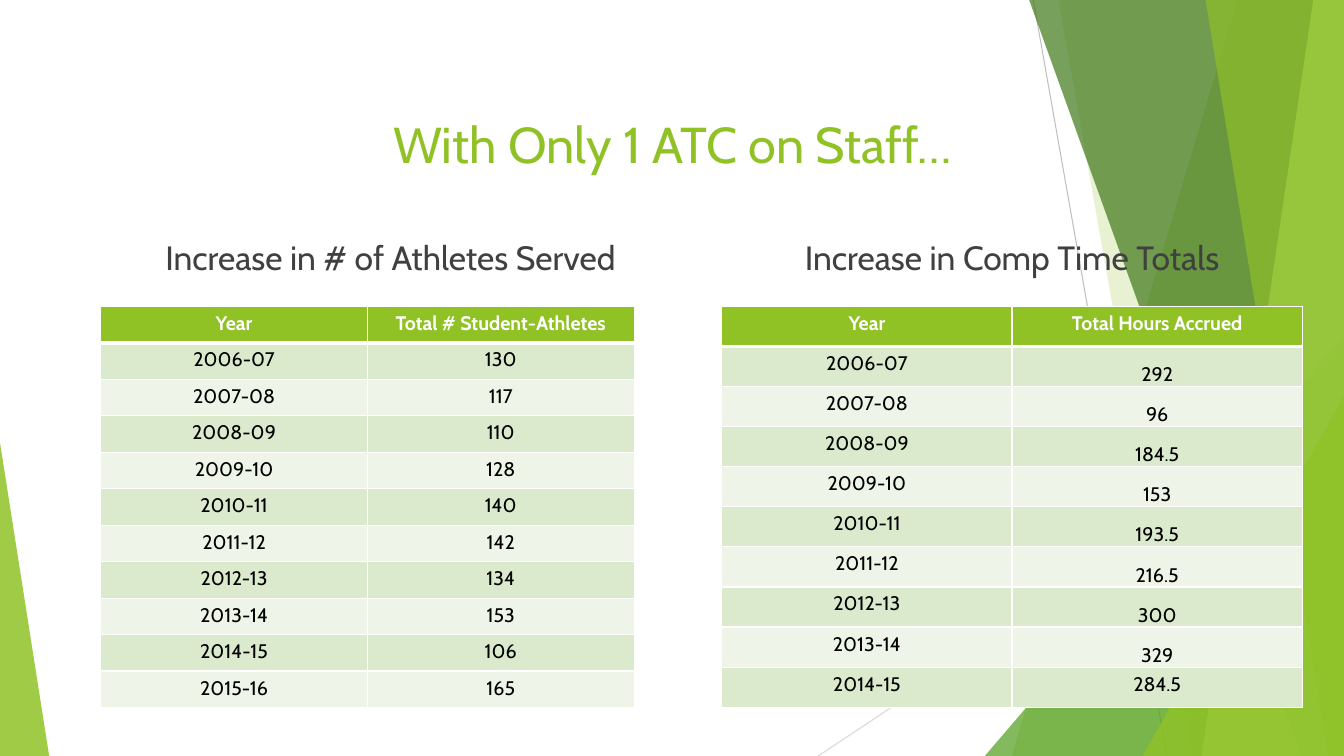
"""Build the slide on athletes served and comp time with one ATC on staff."""
from pptx import Presentation
from pptx.dml.color import RGBColor
from pptx.enum.shapes import MSO_CONNECTOR, MSO_SHAPE
from pptx.enum.text import MSO_ANCHOR, MSO_AUTO_SIZE, PP_ALIGN
from pptx.oxml.ns import qn
from pptx.util import Cm, Pt
from lxml.etree import SubElement

WIDE, HIGH = 33.87, 19.05
FONT = "Cabin"
HUES = {
    "lime": "90C226", "green": "54A021", "forest": "3F7819", "pale": "C0E474",
    "band": "DBE9CD", "light": "EEF4E8", "text": "404040", "black": "000000",
    "white": "FFFFFF", "grey": "BFBFBF", "silver": "D9D9D9",
}

TITLE = ("With Only 1 ATC on Staff…", (3.61, 2.72, 26.67, 3.02))
HEADS = {
    1: ("Increase in # of Athletes Served", (2.97, 5.89, 13.74, 1.22)),
    3: ("Increase in Comp Time Totals", (18.95, 5.89, 13.11, 1.22)),
}
ATHLETES = [
    ("Year", "Total # Student-Athletes"),
    ("2006-07", "130"), ("2007-08", "117"), ("2008-09", "110"),
    ("2009-10", "128"), ("2010-11", "140"), ("2011-12", "142"),
    ("2012-13", "134"), ("2013-14", "153"), ("2014-15", "106"),
    ("2015-16", "165"),
]
HOURS = [
    ("Year", "Total Hours Accrued"),
    ("2006-07", "292"), ("2007-08", "96"), ("2008-09", "184.5"),
    ("2009-10", "153"), ("2010-11", "193.5"), ("2011-12", "216.5"),
    ("2012-13", "300"), ("2013-14", "329"), ("2014-15", "284.5"),
]
TABLES = [(ATHLETES, (2.54, 7.72, 13.44, 10.11), False),
          (HOURS, (18.19, 7.72, 14.63, 10.11), True)]

LINES = [("grey", (26.04, 0, 29.41, HIGH)),
         ("silver", (WIDE, 10.24, 20.62, HIGH))]
DECOR = [
    ("blade", 31.19, 25.5, "lime", 30),
    ("blade", 26.67, 30.05, "lime", 20),
    ("wedge", (24.82, 8.46, 9.05), 1, "green", 72),
    ("blade", 25.93, 32.79, "forest", 70),
    ("blade", 33.1, 30.28, "pale", 70),
    ("blade", 30.38, 33.48, "lime", 65),
    ("wedge", (28.8, 9.98, 5.07), 1, "lime", 80),
    ("wedge", (0, 11.15, 1.24), 0, "lime", 85),
]
LOW = {"vertical_anchor": MSO_ANCHOR.BOTTOM, "margin_left": Cm(0.02),
       "margin_right": Cm(0.02), "margin_top": Cm(0.02), "margin_bottom": 0}


def apply(item, values):
    for name, value in values.items():
        setattr(item, name, value)


def hue(name):
    return RGBColor.from_string(HUES[name])


def write(frame, text, size, tint, bold=False, before=0):
    frame.text = text
    para = frame.paragraphs[0]
    apply(para, {"alignment": PP_ALIGN.CENTER, "space_before": Pt(before)})
    font = para.runs[0].font
    apply(font, {"name": FONT, "size": Pt(size), "bold": bold})
    font.color.rgb = hue(tint)


def place(holder, box):
    sides = ("left", "top", "width", "height")
    apply(holder, {side: Cm(n) for side, n in zip(sides, box)})


def add_line(shapes, tint, ends):
    line = shapes.add_connector(MSO_CONNECTOR.STRAIGHT, *map(Cm, ends))
    line.line.color.rgb = hue(tint)
    line.line.width = Pt(0.75)
    SubElement(line.element.spPr, qn("a:effectLst"))


def add_decor(shapes, kind, first, second, tint, alpha):
    if kind == "blade":
        pen = shapes.build_freeform(Cm(first), Cm(-0.02), scale=1.0)
        pen.add_line_segments([(Cm(WIDE), Cm(-0.02)), (Cm(WIDE), Cm(HIGH)),
                               (Cm(second), Cm(HIGH))], close=True)
        shape = pen.convert_to_shape()
    else:
        left, top, width = first
        shape = shapes.add_shape(MSO_SHAPE.ISOSCELES_TRIANGLE, Cm(left), Cm(top),
                                 Cm(width), Cm(HIGH - top))
        shape.adjustments[0] = second
    shape.shadow.inherit = False
    shape.fill.solid()
    shape.fill.fore_color.rgb = hue(tint)
    shape.line.fill.background()
    color = shape.element.spPr.find(qn("a:solidFill")).find(qn("a:srgbClr"))
    SubElement(color, qn("a:alpha"), val=str(alpha * 1000))


def add_edges(cell, row):
    props = cell._tc.get_or_add_tcPr()
    thick = {"lnB": 0, "lnT": 1}
    for side in ("lnL", "lnR", "lnT", "lnB"):
        width = Pt(3 if thick.get(side) == row else 1)
        edge = SubElement(props, qn("a:" + side), w=str(width))
        fill = SubElement(edge, qn("a:solidFill"))
        SubElement(fill, qn("a:srgbClr"), val=HUES["white"])


def add_table(shapes, rows, box, sunk):
    table = shapes.add_table(len(rows), 2, *map(Cm, box)).table
    for line in table.rows:
        line.height = Cm(box[3] / len(rows))
    for r, values in enumerate(rows):
        for c, text in enumerate(values):
            cell = table.cell(r, c)
            head = r == 0
            write(cell.text_frame, text, 14, "white" if head else "black", head)
            add_edges(cell, r)
            cell.fill.solid()
            tint = "lime" if head else ("light", "band")[r % 2]
            cell.fill.fore_color.rgb = hue(tint)
            if sunk and c == 1 and 0 < r < len(rows) - 1:
                apply(cell, LOW)


def main():
    deck = Presentation()
    apply(deck, {"slide_width": Cm(WIDE), "slide_height": Cm(HIGH)})
    slide = deck.slides.add_slide(deck.slide_layouts[4])
    shapes = slide.shapes
    for tint, ends in LINES:
        add_line(shapes, tint, ends)
    for part in DECOR:
        add_decor(shapes, *part)

    texts = {0: TITLE, **HEADS}
    for holder in list(slide.placeholders):
        idx = holder.placeholder_format.idx
        tree = holder.element.getparent()
        tree.remove(holder.element)
        if idx not in texts:
            continue
        tree.append(holder.element)
        text, box = texts[idx]
        place(holder, box)
        look = (36, "lime") if idx == 0 else (24, "text", False, 10)
        write(holder.text_frame, text, *look)
        anchor = MSO_ANCHOR.TOP if idx == 0 else MSO_ANCHOR.BOTTOM
        apply(holder.text_frame, {"vertical_anchor": anchor, "word_wrap": True,
                                  "auto_size": MSO_AUTO_SIZE.NONE})

    for rows, box, sunk in TABLES:
        add_table(shapes, rows, box, sunk)
    deck.save("out.pptx")


if __name__ == "__main__":
    main()
